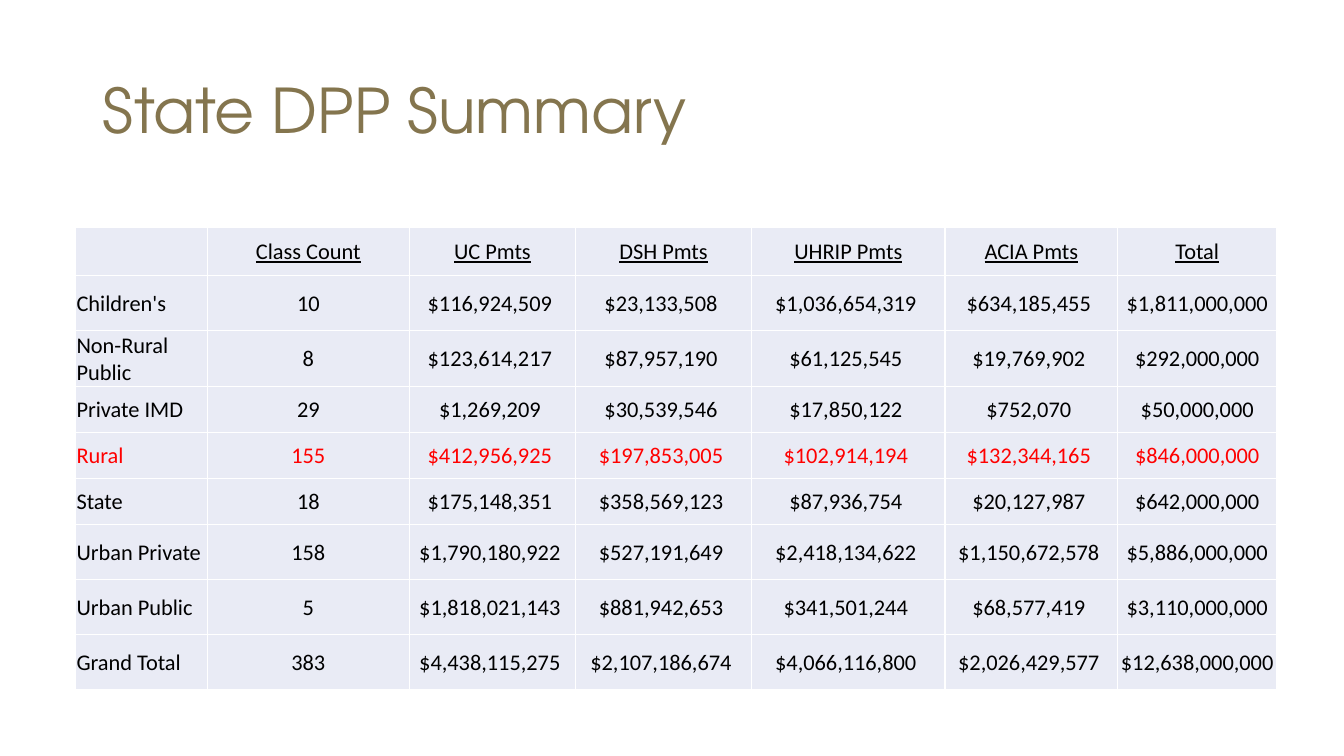
from dataclasses import dataclass

from lxml import etree
from pptx import Presentation
from pptx.dml.color import RGBColor
from pptx.enum import text
from pptx.oxml import ns
from pptx.util import Pt


@dataclass(frozen=True)
class Theme:
    """Colours, fonts and type sizes of the deck."""
    title_color: str = "84754E"
    ink: str = "000000"
    accent: str = "FF0000"
    cell_fill: str = "E9EBF5"
    border: str = "FFFFFF"
    title_font: str = "TeX Gyre Adventor"
    body_font: str = "Calibri"
    title_size: int = 44
    body_size: int = 16


THEME = Theme()
HEADERS = ["", "Class Count", "UC Pmts", "DSH Pmts", "UHRIP Pmts", "ACIA Pmts", "Total"]
HOSPITALS = [
    ("Children's", 10, 116924509, 23133508, 1036654319, 634185455, 1811000000),
    ("Non-Rural Public", 8, 123614217, 87957190, 61125545, 19769902, 292000000),
    ("Private IMD", 29, 1269209, 30539546, 17850122, 752070, 50000000),
    ("Rural", 155, 412956925, 197853005, 102914194, 132344165, 846000000),
    ("State", 18, 175148351, 358569123, 87936754, 20127987, 642000000),
    ("Urban Private", 158, 1790180922, 527191649, 2418134622, 1150672578, 5886000000),
    ("Urban Public", 5, 1818021143, 881942653, 341501244, 68577419, 3110000000),
    ("Grand Total", 383, 4438115275, 2107186674, 4066116800, 2026429577, 12638000000),
]
HIGHLIGHT = "Rural"
COLUMN_WIDTHS = [94, 144.5, 118.5, 126, 138, 123.5, 113.5]
ROW_HEIGHTS = [34.2, 39.4, 39.8, 32.9, 32.9, 32.9, 39.4, 39.4, 39.4]


def write(tf, content, size=THEME.body_size, font=THEME.body_font, color=THEME.ink,
          align=text.PP_ALIGN.LEFT, underline=False, spacing=1.0):
    """Write one formatted paragraph into a text frame."""
    p = tf.paragraphs[0]
    p.alignment, p.line_spacing = align, spacing
    r = p.add_run()
    r.text = content
    r.font.size, r.font.name, r.font.underline = Pt(size), font, underline
    r.font.bold = False
    r.font.color.rgb = RGBColor.from_string(color)


def outline(cell):
    """Give a cell thin borders on its four sides."""
    tc_pr = cell._tc.get_or_add_tcPr()
    for i, side in enumerate(("lnL", "lnR", "lnT", "lnB")):
        ln = etree.Element(ns.qn(f"a:{side}"), w=str(Pt(1)))
        fill = etree.SubElement(ln, ns.qn("a:solidFill"))
        etree.SubElement(fill, ns.qn("a:srgbClr"), val=THEME.border)
        tc_pr.insert(i, ln)


def add_title(s, content, x, y, w, h):
    """Place the title placeholder in its box."""
    sp = s.shapes.title
    sp.left, sp.top, sp.width, sp.height = Pt(x), Pt(y), Pt(w), Pt(h)
    tf = sp.text_frame
    tf.word_wrap = True
    tf.vertical_anchor = text.MSO_ANCHOR.MIDDLE
    write(tf, content, size=THEME.title_size, font=THEME.title_font,
          color=THEME.title_color, spacing=0.9)


def add_payments(s, x, y, w, h):
    """Place the payments table in its box, scaling columns and rows to fit."""
    rows = [HEADERS] + [
        [name, str(count), *(f"${v:,} " for v in payments), f"${total:,}"]
        for name, count, *payments, total in HOSPITALS
    ]
    table = s.shapes.add_table(len(rows), len(HEADERS), Pt(x), Pt(y), Pt(w), Pt(h)).table
    table.first_row = table.horz_banding = False
    for column, width in zip(table.columns, COLUMN_WIDTHS):
        column.width = Pt(width * w / sum(COLUMN_WIDTHS))
    for row, height in zip(table.rows, ROW_HEIGHTS):
        row.height = Pt(height * h / sum(ROW_HEIGHTS))
    for i, values in enumerate(rows):
        for j, value in enumerate(values):
            cell = table.cell(i, j)
            cell.fill.solid()
            cell.fill.fore_color.rgb = RGBColor.from_string(THEME.cell_fill)
            outline(cell)
            cell.vertical_anchor = text.MSO_ANCHOR.MIDDLE
            cell.margin_left = cell.margin_right = cell.margin_top = Pt(0.7)
            cell.margin_bottom = Pt(0)
            if value:
                write(cell.text_frame, value, underline=i == 0,
                      color=THEME.accent if values[0] == HIGHLIGHT else THEME.ink,
                      align=text.PP_ALIGN.CENTER if j else text.PP_ALIGN.LEFT)


def main():
    """Build the summary slide and save it."""
    prs = Presentation()
    prs.slide_width, prs.slide_height = Pt(960), Pt(540)
    s = prs.slides.add_slide(prs.slide_layouts[5])
    add_title(s, "State DPP Summary", 66, 28.75, 828, 104.4)
    add_payments(s, 54, 162.7, 858, 330)
    prs.save("out.pptx")


if __name__ == "__main__":
    main()
